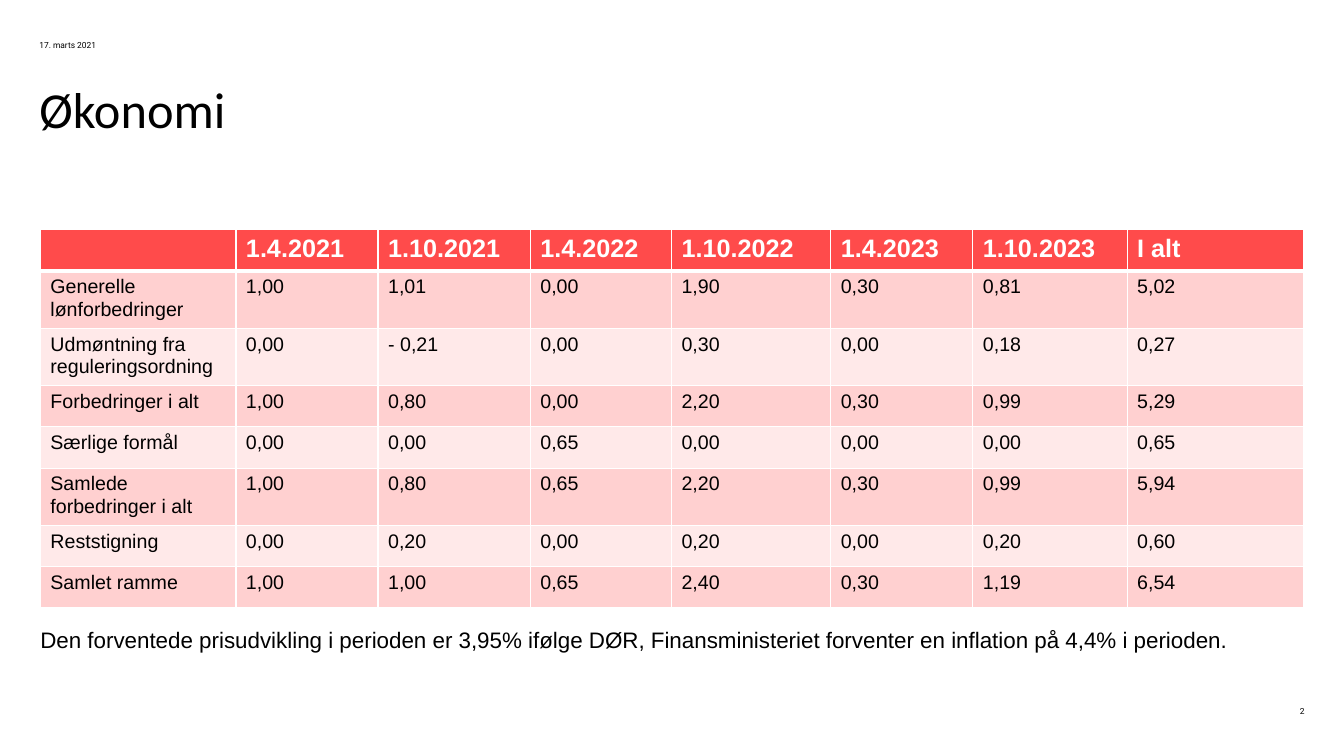
from lxml.etree import SubElement as Sub
from pptx import Presentation
from pptx.dml.color import RGBColor
from pptx.enum.text import MSO_ANCHOR as Anchor, PP_ALIGN as Align
from pptx.oxml.ns import qn
from pptx.util import Inches, Pt

WIDTHS = [1.94, 1.41, 1.51, 1.4, 1.58, 1.41, 1.53, 1.75]
HEADS = ["", "1.4.2021", "1.10.2021", "1.4.2022", "1.10.2022",
         "1.4.2023", "1.10.2023", "I alt"]
ROWS = [
    ["Generelle lønforbedringer", "1,00", "1,01", "0,00", "1,90", "0,30", "0,81", "5,02"],
    ["Udmøntning fra reguleringsordning", "0,00", "- 0,21", "0,00", "0,30", "0,00", "0,18", "0,27"],
    ["Forbedringer i alt", "1,00", "0,80", "0,00", "2,20", "0,30", "0,99", "5,29"],
    ["Særlige formål", "0,00", "0,00", "0,65", "0,00", "0,00", "0,00", "0,65"],
    ["Samlede forbedringer i alt", "1,00", "0,80", "0,65", "2,20", "0,30", "0,99", "5,94"],
    ["Reststigning", "0,00", "0,20", "0,00", "0,20", "0,00", "0,20", "0,60"],
    ["Samlet ramme", "1,00", "1,00", "0,65", "2,40", "0,30", "1,19", "6,54"],
]
NOTE = ("Den forventede prisudvikling i perioden er 3,95% ifølge DØR, "
        "Finansministeriet forventer en inflation på 4,4% i perioden.")


def paint(target, color):
    target.rgb = RGBColor.from_string(color)


def style(para, size, face, color="000000", bold=False):
    font = para.font
    font.size, font.name, font.bold = Pt(size), face, bold
    paint(font.color, color)


def add_text(slide, box, text, size, face, anchor=Anchor.TOP, align=Align.LEFT, space=1.0):
    frame = slide.shapes.add_textbox(*map(Inches, box)).text_frame
    frame.word_wrap = True
    frame.vertical_anchor = anchor
    frame.margin_left = frame.margin_top = frame.margin_right = frame.margin_bottom = 0
    para = frame.paragraphs[0]
    para.text, para.alignment, para.line_spacing = text, align, space
    style(para, size, face)


def add_edges(cell, top, bottom):
    props = cell._tc.get_or_add_tcPr()
    for side, width in zip("LRTB", (1, 1, top, bottom)):
        line = Sub(props, qn(f"a:ln{side}"), w=str(Pt(width)))
        fill = Sub(line, qn("a:solidFill"))
        Sub(fill, qn("a:srgbClr"), val="FFFFFF")


def fill_cell(cell, text, row):
    head = row == 0
    add_edges(cell, 3 if row == 1 else 1, 3 if head else 1)
    cell.fill.solid()
    paint(cell.fill.fore_color, "FF4B4B" if head else "FFD0D0" if row % 2 else "FFE9E9")
    cell.text = text
    size, color = (18, "FFFFFF") if head else (14, "000000")
    style(cell.text_frame.paragraphs[0], size, "Arial", color, head)


def add_grid(slide, left, top, high):
    data = [HEADS, *ROWS]
    table = slide.shapes.add_table(
        len(data), len(WIDTHS), Inches(left), Inches(top),
        Inches(sum(WIDTHS)), Inches(high * len(data))).table
    table.horz_banding = False
    for col, width in zip(table.columns, WIDTHS):
        col.width = Inches(width)
    for r, texts in enumerate(data):
        table.rows[r].height = Inches(high)
        for c, text in enumerate(texts):
            fill_cell(table.cell(r, c), text, r)


def main():
    deck = Presentation()
    deck.slide_width, deck.slide_height = Inches(13.33), Inches(7.5)
    slide = deck.slides.add_slide(deck.slide_layouts[6])
    add_text(slide, (0.39, 0.88, 12.55, 1.4), "Økonomi", 36, "Calibri", space=0.83)
    add_grid(slide, 0.4, 2.28, 0.41)
    add_text(slide, (0.39, 0.39, 1.08, 0.12), "17. marts 2021", 6, "Roboto", Anchor.MIDDLE)
    add_text(slide, (12.56, 6.99, 0.38, 0.12), "2", 6, "Roboto", Anchor.MIDDLE, Align.RIGHT)
    add_text(slide, (0.4, 6.21, 12.55, 0.27), NOTE, 16, "Arial")
    deck.save("out.pptx")


if __name__ == "__main__":
    main()
